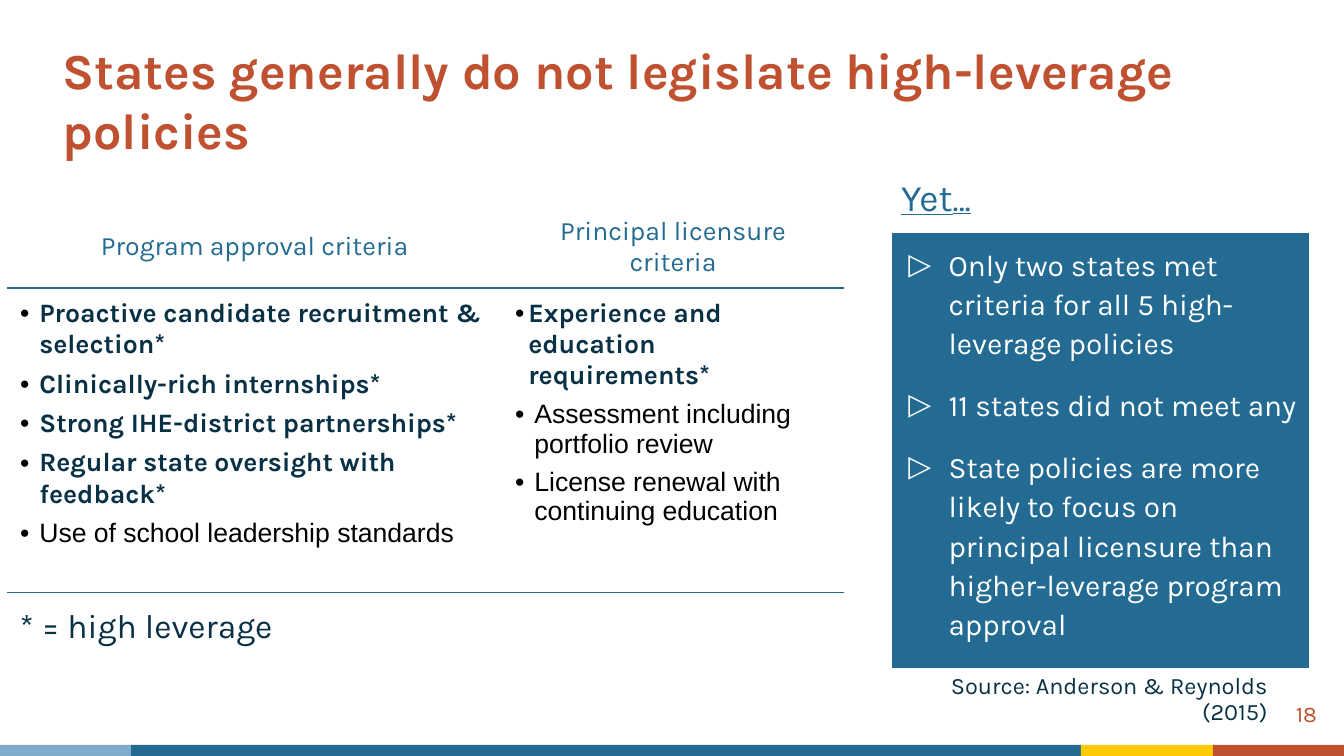
from dataclasses import dataclass
from itertools import accumulate

from lxml.etree import SubElement as Sub
from pptx import Presentation
from pptx.dml.color import RGBColor as RGB
from pptx.enum.shapes import MSO_SHAPE as Shape
from pptx.enum.text import MSO_ANCHOR as Anchor, MSO_AUTO_SIZE as Fit, PP_ALIGN as Align
from pptx.oxml.ns import qn
from pptx.util import Pt

PX = 9144  # EMU per px, 100 px to the inch


@dataclass(frozen=True)
class Theme:
    font: str = "Karla"
    plain: str = "Arial"
    blue: str = "236B92"
    sky: str = "7FACCC"
    gold: str = "FFCB02"
    rust: str = "BF5030"
    navy: str = "093146"
    white: str = "FFFFFF"
    black: str = "000000"
    title: float = 36
    lead: float = 26.7
    note: float = 24
    body: float = 21.3
    cell: float = 19
    source: float = 16.8
    page: float = 16


def write(para, text, font, size, color, bold=False, line=False,
          align=Align.LEFT, gap=None, before=None, after=None):
    """Add a run to para and set the paragraph's alignment and spacing."""
    para.alignment = align
    if gap:
        para.line_spacing = gap
    if before is not None:
        para.space_before = Pt(before)
    if after is not None:
        para.space_after = Pt(after)
    run = para.add_run()
    run.text = text
    face = run.font
    face.name, face.size, face.bold, face.underline = font, Pt(size), bold, line
    face.color.rgb = RGB.from_string(color)


def bullet(para, mark, color, left, hang):
    props = para._p.get_or_add_pPr()
    props.set("marL", str(left * PX))
    props.set("indent", str(-hang * PX))
    Sub(Sub(props, qn("a:buClr")), qn("a:srgbClr"), val=color)
    Sub(props, qn("a:buFont"), typeface="Arial")
    Sub(props, qn("a:buChar"), char=mark)


def paras(frame, count):
    """Return count paragraphs of an empty frame."""
    return [frame.paragraphs[0]] + [frame.add_paragraph() for _ in range(count - 1)]


def inset(box, side, top):
    box.margin_left = box.margin_right = side * PX
    box.margin_top = box.margin_bottom = top * PX


def border(cell, color, **widths):
    """Draw the named sides (L, R, T, B) in points and clear the others."""
    props = cell._tc.get_or_add_tcPr()
    for spot, side in enumerate("LRTB"):
        width = widths.get(side)
        edge = Sub(props, qn("a:ln" + side), w=str(Pt(width or 0)))
        if width:
            Sub(Sub(edge, qn("a:solidFill")), qn("a:srgbClr"), val=color)
        else:
            Sub(edge, qn("a:noFill"))
        props.insert(spot, edge)


class Deck:
    def __init__(self, theme):
        self.theme = theme
        self.file = Presentation()
        self.file.slide_width, self.file.slide_height = 1333 * PX, 750 * PX
        self.slide = self.file.slides.add_slide(self.file.slide_layouts[5])

    def title(self, text, *at):
        head = self.slide.shapes.title
        head.left, head.top, head.width, head.height = (n * PX for n in at)
        frame = head.text_frame
        frame.word_wrap, frame.auto_size = True, Fit.NONE
        frame.vertical_anchor = Anchor.MIDDLE
        t = self.theme
        write(frame.paragraphs[0], text, t.font, t.title, t.rust, bold=True)

    def block(self, fill, *at, line=None):
        box = self.slide.shapes.add_shape(Shape.RECTANGLE, *(n * PX for n in at))
        box.shadow.inherit = False
        box.fill.solid()
        box.fill.fore_color.rgb = RGB.from_string(fill)
        if line:
            box.line.color.rgb = RGB.from_string(line)
            box.line.width = Pt(0.75)
        else:
            box.line.fill.background()
        return box

    def panel(self, items, *at):
        t = self.theme
        frame = self.block(t.blue, *at, line=t.white).text_frame
        frame.word_wrap, frame.vertical_anchor = True, Anchor.TOP
        inset(frame, 10, 10)
        for spot, (para, item) in enumerate(zip(paras(frame, len(items)), items)):
            bullet(para, "▷", t.white, 47, 40)
            write(para, item, t.font, t.body, t.white, gap=1.1,
                  before=16 if spot else 0)

    def label(self, parts, *at, color, pad=5, **form):
        """Place one line made of (text, size) parts."""
        box = self.slide.shapes.add_textbox(*(n * PX for n in at))
        frame = box.text_frame
        frame.word_wrap = True
        inset(frame, 10, pad)
        for text, size in parts:
            write(frame.paragraphs[0], text, self.theme.font, size, color, **form)

    def table(self, heads, lists, cols, rows, *at):
        t = self.theme
        left, top = at
        grid = self.slide.shapes.add_table(
            2, len(cols), left * PX, top * PX, sum(cols) * PX, sum(rows) * PX).table
        grid.first_row = grid.horz_banding = False
        for row, high in zip(grid.rows, rows):
            row.height = high * PX
        for spot, (head, items, wide) in enumerate(zip(heads, lists, cols)):
            grid.columns[spot].width = wide * PX
            upper, lower = grid.cell(0, spot), grid.cell(1, spot)
            for cell in (upper, lower):
                cell.fill.background()
                inset(cell, 13, 10)
            border(upper, t.blue, B=1)
            border(lower, t.blue, T=1, B=0.25)
            upper.vertical_anchor = Anchor.MIDDLE
            write(upper.text_frame.paragraphs[0], head, t.font, t.cell, t.blue,
                  align=Align.CENTER)
            lines = paras(lower.text_frame, len(items))
            for para, (item, left) in zip(lines, items):
                high = item.endswith("*")
                bullet(para, "•", t.black, left, left)
                write(para, item, t.font if high else t.plain, t.cell,
                      t.navy if high else t.black, bold=high,
                      after=0 if para is lines[-1] else 6)


def main():
    t = Theme()
    deck = Deck(t)
    wides = [130, 942, 131, 130]
    starts = accumulate(wides, initial=0)
    for fill, left, wide in zip([t.sky, t.blue, t.gold, t.rust], starts, wides):
        deck.block(fill, left, 739, wide, 11)

    deck.title("States generally do not legislate high-leverage policies",
               52, 26, 1184, 145)
    deck.panel([
        "Only two states met criteria for all 5 high-leverage policies",
        "11 states did not meet any",
        "State policies are more likely to focus on principal licensure than "
        "higher-leverage program approval",
    ], 884, 231, 415, 432)
    deck.table(
        ["Program approval criteria", "Principal licensure criteria"],
        [[("Proactive candidate recruitment & selection*", 19),
          ("Clinically-rich internships*", 19),
          ("Strong IHE-district partnerships*", 19),
          ("Regular state oversight with feedback*", 19),
          ("Use of school leadership standards", 19)],
         [("Experience and education requirements*", 13),
          ("Assessment including portfolio review", 19),
          ("License renewal with continuing education", 19)]],
        [491, 339], [68, 302], 7, 204)

    deck.label([("Yet", t.lead), ("…", t.note)], 884, 168, 141, 55,
               color=t.blue, line=True)
    deck.label([("Source: Anderson & Reynolds (2015)", t.source)],
               875, 664, 392, 42, color=t.navy, align=Align.RIGHT, gap=0.9)
    deck.label([("* = high leverage", t.note)], 10, 595, 700, 50, color=t.navy)
    deck.label([("18", t.page)], 1236, 685, 80, 46, color=t.rust, pad=10,
               align=Align.RIGHT)
    deck.file.save("out.pptx")


if __name__ == "__main__":
    main()
